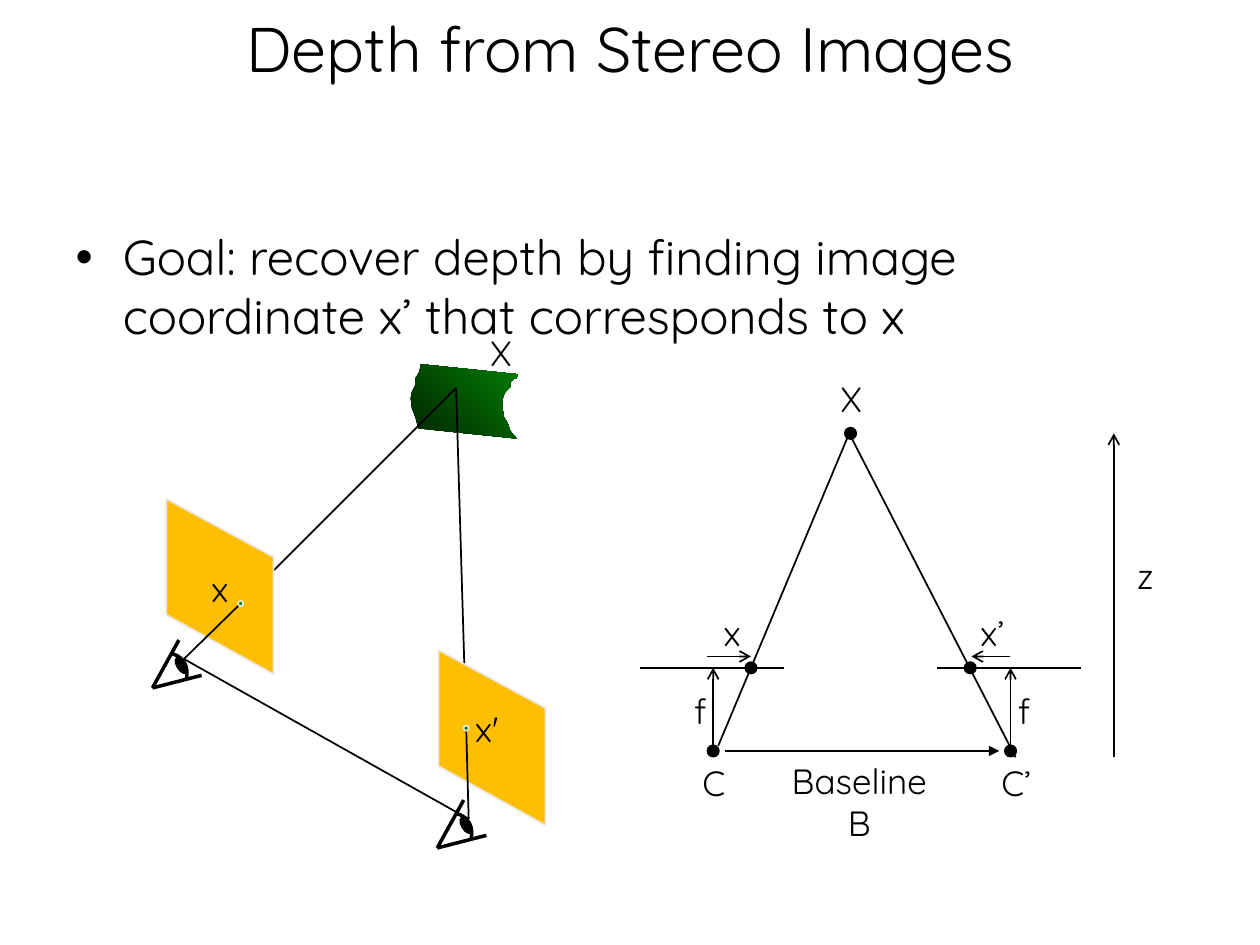
"""Build a slide that explains how depth is recovered from stereo images."""
from dataclasses import dataclass

from pptx import Presentation
from pptx import util as u
from pptx.dml.color import RGBColor
from pptx.enum import shapes, text
from pptx.oxml.ns import qn
from pptx.util import Inches


@dataclass(frozen=True)
class Theme:
    font: str = "Quicksand"
    title_size: int = 36
    body_size: int = 28
    label_size: int = 20
    ink: RGBColor = RGBColor.from_string("000000")
    plane: RGBColor = RGBColor.from_string("FEBF02")
    edge: RGBColor = RGBColor.from_string("EAE7E4")
    dark_green: RGBColor = RGBColor.from_string("012501")
    green: RGBColor = RGBColor.from_string("037C03")


theme = Theme()
deck = Presentation()
deck.slide_width, deck.slide_height = Inches(10), Inches(7.5)
page = deck.slides.add_slide(deck.slide_layouts[1])


def add_outline(points, line, width=1, fill=None):
    corners = [(Inches(x), Inches(y)) for x, y in points]
    builder = page.shapes.build_freeform(*corners[0])
    builder.add_line_segments(corners[1:], close=fill is not None)
    outline = builder.convert_to_shape()
    outline.shadow.inherit = False
    outline.line.color.rgb = line
    outline.line.width = u.Pt(width)
    if fill is None:
        outline.fill.background()
    else:
        outline.fill.solid()
        outline.fill.fore_color.rgb = fill
    return outline


def add_line(start, end, width=1, arrow=None):
    line = page.shapes.add_connector(
        shapes.MSO_CONNECTOR.STRAIGHT, *(Inches(value) for value in (*start, *end)))
    line.line.color.rgb = theme.ink
    line.line.width = u.Pt(width)
    if arrow:
        stroke = line.line._get_or_add_ln()
        stroke.append(stroke.makeelement(qn("a:tailEnd"), {"type": arrow}))
    properties = line._element.spPr
    properties.append(properties.makeelement(qn("a:effectLst"), {}))


title, body = page.placeholders
for box, place, wording, size in (
    (title, (0, 0, 10, 0.75), "Depth from Stereo Images", theme.title_size),
    (body, (0.5, 1.75, 9, 4.95),
     "Goal: recover depth by finding image coordinate x’ that corresponds to x",
     theme.body_size),
):
    box.left, box.top, box.width, box.height = map(Inches, place)
    box.text_frame.text = wording
    para = box.text_frame.paragraphs[0]
    para.font.name, para.font.size = theme.font, u.Pt(size)
    para.font.color.rgb = theme.ink

scene_point, left_center, right_center = (6.74, 3.44), (5.66, 5.96), (8.02, 5.96)
image_y, offset_y = 5.3, 5.21
for center_x, _ in (left_center, right_center):
    add_line((center_x - 0.58, image_y), (center_x + 0.56, image_y))
    add_line((center_x, 5.92), (center_x, image_y), arrow="arrow")
add_line((5.7, 5.92), scene_point)
add_line((8.06, 6.01), scene_point)
add_line((5.61, offset_y), (5.96, offset_y), arrow="arrow")
add_line((8.02, offset_y), (7.71, offset_y), arrow="arrow")
add_line((8.84, 6.01), (8.84, scene_point[1]), arrow="arrow")
add_line((5.75, 5.96), (7.93, 5.96), 1.5, "triangle")

surface = [
    (3.34, 2.89), (3.33, 2.95), (3.3, 3), (3.3, 3.05), (3.27, 3.11), (3.26, 3.16),
    (3.27, 3.24), (3.3, 3.32), (3.32, 3.4), (4.1, 3.48), (4.05, 3.42), (4.03, 3.36),
    (4, 3.31), (3.99, 3.25), (3.99, 3.16), (4.01, 3.11), (4.05, 3.07), (4.05, 3.04),
    (4.07, 3.01), (4.1, 3), (4.11, 2.97)]
patch = add_outline(surface, theme.green, fill=theme.green)
patch.line.fill.background()
patch.fill.gradient()
patch.fill.gradient_angle = 45
for stop, color in zip(patch.fill.gradient_stops, (theme.dark_green, theme.green)):
    stop.color.rgb = color

patch_point = (3.62, 3.08)
eyes = ((1.46, 5.23), (3.72, 6.5))
image_points = ((1.91, 4.79), (3.7, 5.78))
add_line(*eyes)
for image_point in image_points:
    add_line(image_point, patch_point)

for left, top in ((1.32, 3.96), (3.48, 5.16)):
    right = left + 0.85
    add_outline([(left, top), (right, top + 0.46), (right, top + 1.39), (left, top + 0.92)],
                theme.edge, fill=theme.plane)

cornea = ((-0.09, -0.04), (-0.01, -0.02), (0.04, 0.06), (0.02, 0.15))
steps = 10
for (eye_x, eye_y), image_point in zip(eyes, image_points):
    add_line((eye_x, eye_y), image_point)
    curve = []
    for step in range(steps + 1):
        t = step / steps
        weights = ((1 - t) ** 3, 3 * t * (1 - t) ** 2, 3 * t ** 2 * (1 - t), t ** 3)
        curve.append((eye_x + sum(w * x for w, (x, _) in zip(weights, cornea)),
                      eye_y + sum(w * y for w, (_, y) in zip(weights, cornea))))
    add_outline(curve, theme.ink, 2)
    corner = (eye_x - 0.25, eye_y + 0.23)
    add_line((eye_x - 0.04, eye_y - 0.15), corner, 2)
    add_line(corner, (eye_x + 0.14, eye_y + 0.13), 2)

dots = [(point, 0.09, 0.09, 0, theme.ink, theme.ink) for point in (
    left_center, right_center, (6.75, 3.44), (5.96, 5.3), (7.7, 5.3))]
dots += [((x - 0.02, y + 0.05), 0.07, 0.14, 329, theme.ink, theme.ink) for x, y in eyes]
dots += [(point, 0.04, 0.04, 0, theme.green, theme.edge) for point in image_points]
for (x, y), width, height, angle, fill, line in dots:
    dot = page.shapes.add_shape(
        shapes.MSO_SHAPE.OVAL, Inches(x - width / 2), Inches(y - height / 2),
        Inches(width), Inches(height))
    dot.rotation = angle
    dot.shadow.inherit = False
    dot.fill.solid()
    dot.fill.fore_color.rgb = fill
    dot.line.color.rgb = line
    dot.line.width = u.Pt(1)

for wording, left, top, width, height, wrap in (
    ("f", 5.41, 5.42, 0.28, 0.44, False),
    ("f", 7.98, 5.42, 0.28, 0.44, False),
    ("x", 5.64, 4.8, 0.34, 0.44, False),
    ("x’", 7.67, 4.8, 0.41, 0.44, False),
    ("z", 8.92, 4.35, 0.34, 0.44, False),
    ("Baseline\vB", 6.18, 5.98, 1.28, 0.77, False),
    ("C", 5.22, 5.99, 0.89, 0.44, True),
    ("C’", 7.62, 5.99, 0.89, 0.44, True),
    ("X", 6.31, 2.94, 0.89, 0.44, True),
    ("X", 3.65, 2.58, 0.65, 0.44, True),
    ("x", 1.42, 4.45, 0.65, 0.44, True),
    ("x'", 3.54, 5.56, 0.65, 0.44, True),
):
    box = page.shapes.add_textbox(*map(Inches, (left, top, width, height)))
    frame = box.text_frame
    frame.word_wrap = wrap
    frame.auto_size = text.MSO_AUTO_SIZE.SHAPE_TO_FIT_TEXT
    frame.vertical_anchor = text.MSO_ANCHOR.MIDDLE
    frame.text = wording
    para = frame.paragraphs[0]
    para.alignment = text.PP_ALIGN.CENTER
    para.font.name, para.font.size = theme.font, u.Pt(theme.label_size)
    para.font.color.rgb = theme.ink

deck.save("out.pptx")
